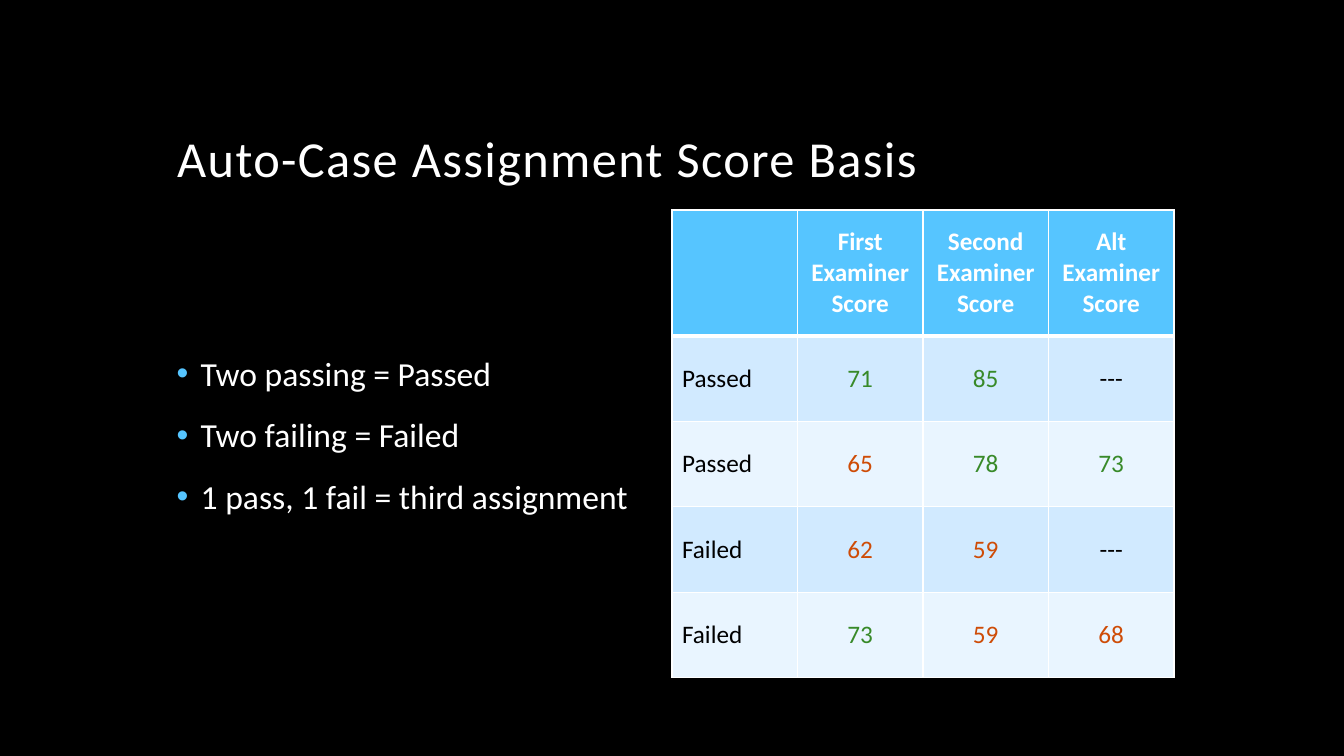
import pptx
import pptx.util
import pptx.dml.color
import pptx.enum.text
import pptx.oxml
import pptx.oxml.ns

Pt = pptx.util.Pt
Align = pptx.enum.text.PP_ALIGN
Anchor = pptx.enum.text.MSO_ANCHOR
SPACE = pptx.oxml.ns.nsdecls("a")
WHITE, BLACK, BLUE = "FFFFFF", "000000", "56C5FF"
GREEN, RED = "388A29", "CE4C07"
BANDS = ["D1EAFF", "E9F5FF"]
PASS = 70

HEADS = ["", "First Examiner Score", "Second Examiner\nScore", "Alt Examiner Score"]
CASES = [
    ["Passed", "71", "85", "---"],
    ["Passed", "65", "78", "73"],
    ["Failed", "62", "59", "---"],
    ["Failed", "73", "59", "68"],
]
RULES = ["Two passing = Passed", "Two failing = Failed", "1 pass, 1 fail = third assignment"]


def color(code):
    return pptx.dml.color.RGBColor.from_string(code)


def xml(text):
    return pptx.oxml.parse_xml(text)


def write(frame, text, size=18, ink=WHITE, bold=False, align=Align.LEFT,
          line=None, gap=0, bullet=None, track=0):
    frame.word_wrap = True
    for i, part in enumerate(text.split("\n")):
        para = frame.paragraphs[0] if i == 0 else frame.add_paragraph()
        para.alignment = align
        if line:
            para.line_spacing = line
        if i and gap:
            para.space_before = Pt(gap)
        if bullet:
            props = para._p.get_or_add_pPr()
            indent = Pt(17.28)
            props.set("marL", str(indent))
            props.set("indent", str(-indent))
            props.append(xml(f'<a:buClr {SPACE}><a:srgbClr val="{bullet}"/></a:buClr>'))
            props.append(xml(f'<a:buFont {SPACE} typeface="Arial"/>'))
            props.append(xml(f'<a:buChar {SPACE} char="•"/>'))
        run = para.add_run()
        run.text = part
        font = run.font
        font.name, font.size, font.bold = "Calibri", Pt(size), bold
        font.color.rgb = color(ink)
        if track:
            run._r.get_or_add_rPr().set("spc", str(track * 100))


def block(slide, box, text, anchor, **form):
    frame = slide.shapes.add_textbox(*map(Pt, box)).text_frame
    frame.vertical_anchor = anchor
    write(frame, text, line=0.9, **form)


def title(slide, box):
    block(slide, box, "Auto-Case Assignment Score Basis", Anchor.BOTTOM, size=36, track=1)


def rules(slide, box):
    block(slide, box, "\n".join(RULES), Anchor.MIDDLE, size=24, gap=18, bullet=BLUE)


def border(cell, top, base):
    props = cell._tc.get_or_add_tcPr()
    for side, width in zip("LRTB", (1, 1, top, base)):
        props.append(xml(
            f'<a:ln{side} {SPACE} w="{Pt(width)}"><a:solidFill>'
            f'<a:srgbClr val="{WHITE}"/></a:solidFill></a:ln{side}>'))


def ink(text):
    if not text.isdigit():
        return BLACK
    return GREEN if int(text) >= PASS else RED


def scores(slide, box):
    left, top, width, height = box
    data = [HEADS] + CASES
    table = slide.shapes.add_table(len(data), len(HEADS), *map(Pt, box)).table
    table.first_row = table.horz_banding = False
    for col in table.columns:
        col.width = Pt(width / len(HEADS))
    head = 90
    for r, items in enumerate(data):
        table.rows[r].height = Pt((height - head) / len(CASES) if r else head)
        for c, text in enumerate(items):
            cell = table.cell(r, c)
            cell.vertical_anchor = Anchor.MIDDLE
            border(cell, 3 if r == 1 else 1, 1 if r else 3)
            cell.fill.solid()
            cell.fill.fore_color.rgb = color(BANDS[(r - 1) % 2] if r else BLUE)
            if text:
                write(cell.text_frame, text, ink=ink(text) if r else WHITE,
                      bold=r == 0, align=Align.CENTER if c else Align.LEFT)


def main():
    deck = pptx.Presentation()
    deck.slide_width, deck.slide_height = Pt(960), Pt(540)
    slide = deck.slides.add_slide(deck.slide_layouts[6])
    fill = slide.background.fill
    fill.solid()
    fill.fore_color.rgb = color(BLACK)
    title(slide, (119.5, 30, 720, 108))
    rules(slide, (119, 150, 348, 324))
    scores(slide, (480, 150, 358.6, 334))
    deck.save("out.pptx")


if __name__ == "__main__":
    main()
